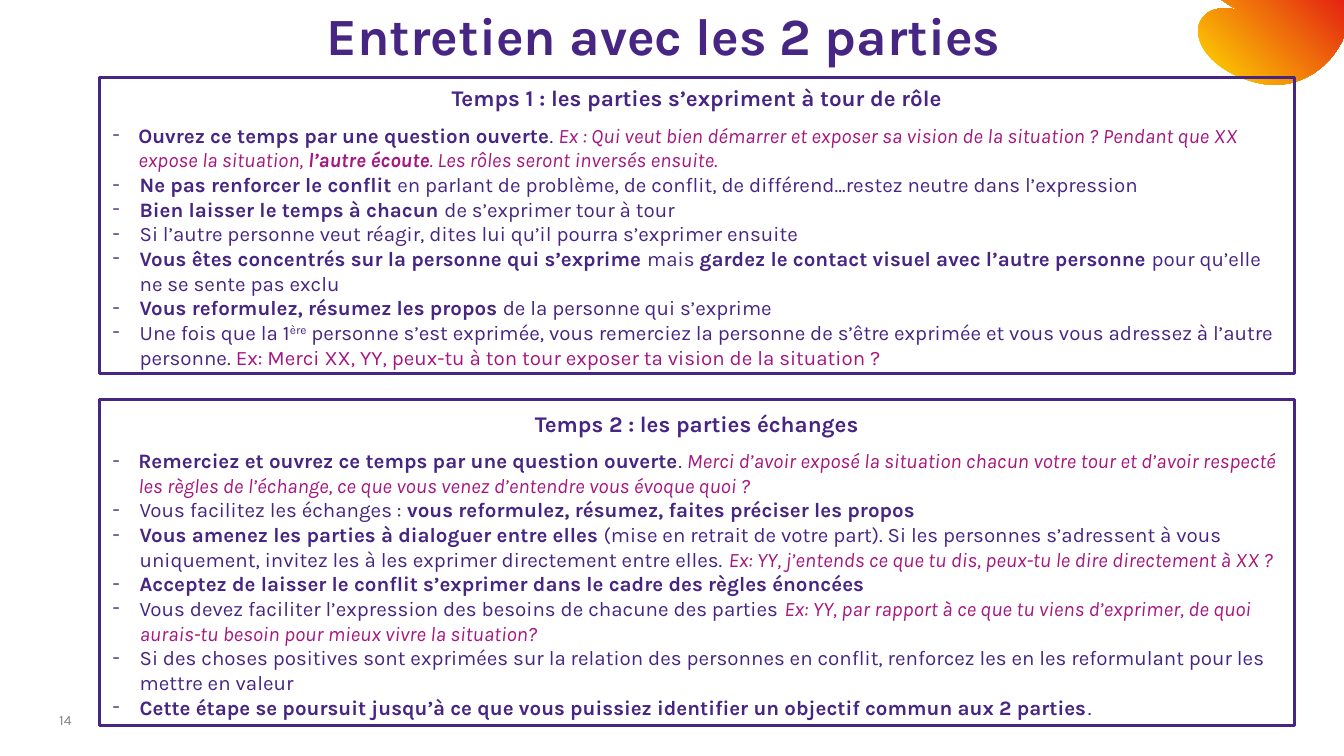
from lxml import etree
from pptx import Presentation
from pptx.dml.color import RGBColor
from pptx.enum.shapes import MSO_SHAPE as Shape
from pptx.enum.text import MSO_ANCHOR as Anchor, PP_ALIGN as Align
from pptx.oxml.ns import qn
from pptx.util import Inches, Pt

PURPLE, MAGENTA, GREY = "472583", "A61680", "808080"
YELLOW, RED = "FFDD00", "E42312"
PLAIN = {}
BOLD = {"bold": True}
ACCENT = {"color": MAGENTA}
EXAMPLE = {"color": MAGENTA, "italic": True}
EXAMPLE_BOLD = EXAMPLE | BOLD
SUPERSCRIPT = {"baseline": 30000}

TURNS = [
    [("Ouvrez ce temps par une question ouverte", BOLD), (". ", PLAIN),
     ("Ex : Qui veut bien démarrer et exposer sa vision de la situation ? "
      "Pendant que XX expose la situation, ", EXAMPLE),
     ("l’autre écoute", EXAMPLE_BOLD),
     (". Les rôles seront inversés ensuite.", EXAMPLE)],
    [("Ne pas renforcer le conflit ", BOLD),
     ("en parlant de problème, de conflit, de différend…restez neutre dans l’expression", PLAIN)],
    [("Bien laisser le temps à chacun ", BOLD), ("de s’exprimer tour à tour", PLAIN)],
    [("Si l’autre personne veut réagir, dites lui qu’il pourra s’exprimer ensuite", PLAIN)],
    [("Vous êtes concentrés sur la personne qui s’exprime ", BOLD), ("mais ", PLAIN),
     ("gardez le contact visuel avec l’autre personne ", BOLD),
     ("pour qu’elle ne se sente pas exclu", PLAIN)],
    [("Vous reformulez, résumez les propos", BOLD), (" de la personne qui s’exprime", PLAIN)],
    [("Une fois que la 1", PLAIN), ("ère", SUPERSCRIPT),
     (" personne s’est exprimée, vous remerciez la personne de s’être exprimée "
      "et vous vous adressez à l’autre personne. ", PLAIN),
     ("Ex: Merci XX, YY, peux-tu à ton tour exposer ta vision de la situation ?", ACCENT)],
]
EXCHANGES = [
    [("Remerciez et ouvrez ce temps par une question ouverte", BOLD), (". ", PLAIN),
     ("Merci d’avoir exposé la situation chacun votre tour et d’avoir respecté les règles "
      "de l’échange, ce que vous venez d’entendre vous évoque quoi ?", EXAMPLE)],
    [("Vous facilitez les échanges : ", PLAIN),
     ("vous reformulez, résumez, faites préciser les propos", BOLD)],
    [("Vous amenez les parties à dialoguer entre elles", BOLD),
     (" (mise en retrait de votre part). Si les personnes s’adressent à vous uniquement, "
      "invitez les à les exprimer directement entre elles. ", PLAIN),
     ("Ex: YY, j’entends ce que tu dis, peux-tu le dire directement à XX ?", EXAMPLE)],
    [("Acceptez de laisser le conflit s’exprimer dans le cadre des règles énoncées", BOLD)],
    [("Vous devez faciliter l’expression des besoins de chacune des parties ", PLAIN),
     ("Ex: YY, par rapport à ce que tu viens d’exprimer, de quoi aurais-tu besoin "
      "pour mieux vivre la situation?", EXAMPLE)],
    [("Si des choses positives sont exprimées sur la relation des personnes en conflit, "
      "renforcez les en les reformulant pour les mettre en valeur", PLAIN)],
    [("Cette étape se poursuit jusqu’à ce que vous puissiez identifier un objectif "
      "commun aux 2 parties", BOLD), (".", PLAIN)],
]


def rgb(value):
    """Turn a hex string into a colour."""
    return RGBColor.from_string(value)


def write(paragraph, text, size=11, color=PURPLE, bold=False, italic=False, baseline=0):
    """Add one formatted run to a paragraph."""
    run = paragraph.add_run()
    run.text = text
    font = run.font
    font.name, font.size, font.bold, font.italic = "Karla", Pt(size), bold, italic
    font.color.rgb = rgb(color)
    if baseline:
        run._r.get_or_add_rPr().set("baseline", str(baseline))


def set_frame(frame, anchor, left=0, top=0, right=0, bottom=0):
    """Set the wrapping, anchor and insets of a text frame."""
    frame.word_wrap = True
    frame.vertical_anchor = anchor
    frame.margin_left, frame.margin_top = Inches(left), Inches(top)
    frame.margin_right, frame.margin_bottom = Inches(right), Inches(bottom)


def add_dash(paragraph, indent):
    """Give a paragraph a hanging dash."""
    properties = paragraph._p.get_or_add_pPr()
    properties.set("marL", str(Inches(indent)))
    properties.set("indent", str(-Inches(indent)))
    etree.SubElement(properties, qn("a:buFont")).set("typeface", "Karla")
    etree.SubElement(properties, qn("a:buChar")).set("char", "-")


def curve(start, first, second, end, steps=24):
    """Return points along a cubic curve, without its start."""
    points = []
    for step in range(1, steps + 1):
        t = step / steps
        weights = ((1 - t) ** 3, 3 * t * (1 - t) ** 2, 3 * t * t * (1 - t), t ** 3)
        points.append(tuple(sum(w * p[axis] for w, p in zip(weights, (start, first, second, end)))
                            for axis in (0, 1)))
    return points


def add_corner(slide, left, top):
    """Draw the gradient petals from the given corner."""
    outline = [(0.17, 0), (1.08, 0), (1.08, 0.26), (1.07, 0.3)]
    for bend in [((0.95, 0.54), (0.7, 0.69), (0.41, 0.61)),
                 ((0.04, 0.51), (-0.09, 0.23), (0.05, 0.11)),
                 ((0.1, 0.06), (0.19, 0.05), (0.32, 0.08)),
                 ((0.29, 0.07), (0.26, 0.06), (0.23, 0.04))]:
        outline += curve(outline[-1], *bend)
    points = [(Inches(left + x), Inches(top + y)) for x, y in outline]
    builder = slide.shapes.build_freeform(*points[0])
    builder.add_line_segments(points[1:], close=True)
    petals = builder.convert_to_shape()
    petals.shadow.inherit = False
    petals.line.fill.background()
    petals.fill.gradient()
    petals.fill.gradient_angle = 45
    for stop, color, position in zip(petals.fill.gradient_stops, (YELLOW, RED), (0, 1)):
        stop.color.rgb, stop.position = rgb(color), position


def add_title(slide, text, left, top, width, height):
    """Place and format the title."""
    title = slide.shapes.title
    title.left, title.top = Inches(left), Inches(top)
    title.width, title.height = Inches(width), Inches(height)
    set_frame(title.text_frame, Anchor.MIDDLE)
    paragraph = title.text_frame.paragraphs[0]
    paragraph.alignment, paragraph.line_spacing = Align.LEFT, 0.8
    write(paragraph, text, size=28, bold=True)


def add_page_number(slide, text, left, top, width, height):
    """Place the page number."""
    box = slide.shapes.add_textbox(Inches(left), Inches(top), Inches(width), Inches(height))
    set_frame(box.text_frame, Anchor.BOTTOM)
    write(box.text_frame.paragraphs[0], text, size=7.5, color=GREY)


def add_stage(slide, heading, items, left, top, width, height, inset):
    """Draw a framed stage with its heading and dashed items."""
    panel = slide.shapes.add_shape(Shape.RECTANGLE, Inches(left), Inches(top),
                                   Inches(width), Inches(height))
    panel.shadow.inherit = False
    panel.fill.background()
    panel.line.color.rgb, panel.line.width = rgb(PURPLE), Pt(1.5)
    frame = panel.text_frame
    set_frame(frame, Anchor.TOP, left=0.1, top=inset, right=0.1)
    paragraph = frame.paragraphs[0]
    paragraph.alignment, paragraph.space_after = Align.CENTER, Pt(6)
    write(paragraph, heading, size=12, bold=True)
    for index, item in enumerate(items):
        paragraph = frame.add_paragraph()
        paragraph.alignment = Align.LEFT
        add_dash(paragraph, 0.2 if index else 0.19)
        for text, style in item:
            write(paragraph, text, **style)


def main():
    """Build and save the slide."""
    presentation = Presentation()
    presentation.slide_width, presentation.slide_height = Inches(10), Inches(10 * 9 / 16)
    slide = presentation.slides.add_slide(presentation.slide_layouts[5])
    add_corner(slide, 8.92, 0)
    add_title(slide, "Entretien avec les 2 parties", 2.43, -0.05, 5.89, 0.7)
    add_page_number(slide, "14", 0.44, 5.32, 0.59, 0.1)
    add_stage(slide, "Temps 1 : les parties s’expriment à tour de rôle", TURNS,
              0.74, 0.58, 8.89, 2.2, inset=0.05)
    add_stage(slide, "Temps 2 : les parties échanges", EXCHANGES,
              0.74, 2.97, 8.89, 2.43, inset=0.08)
    presentation.save("out.pptx")


if __name__ == "__main__":
    main()
